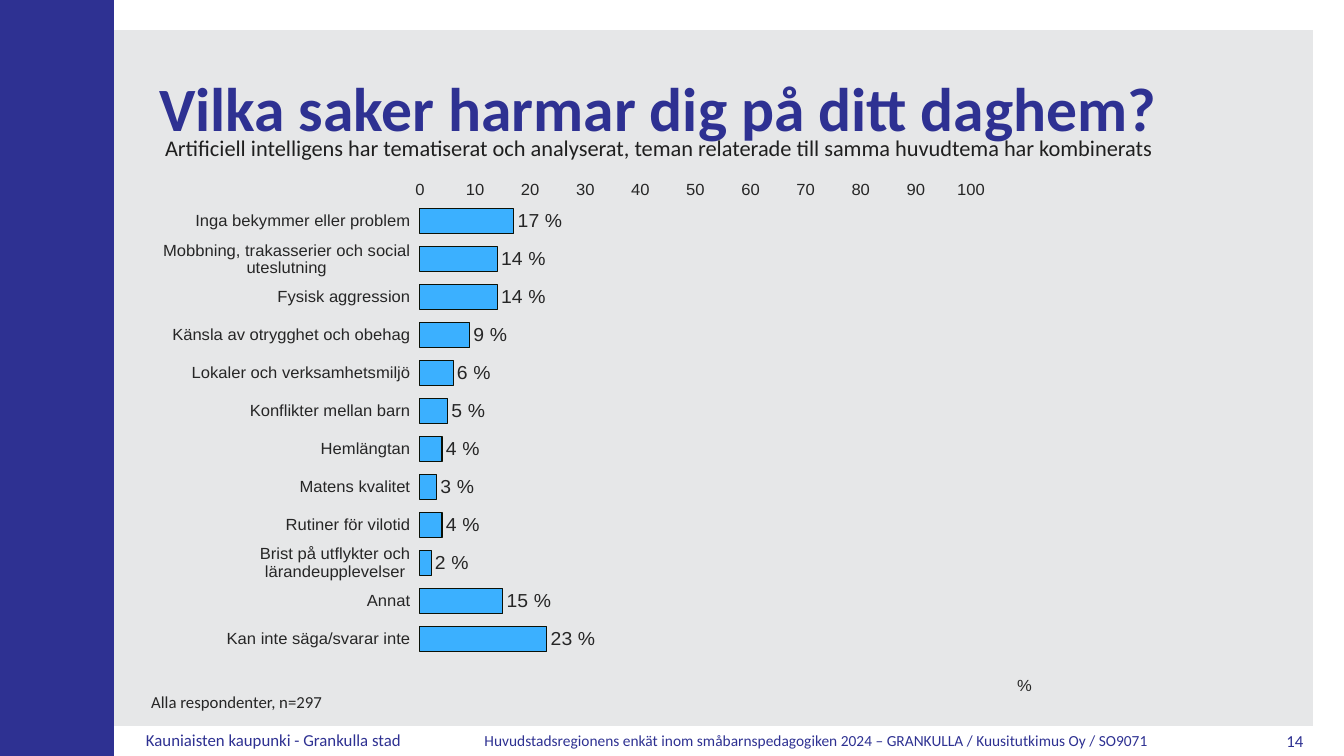
from lxml import etree
from pptx import Presentation
from pptx.chart.data import CategoryChartData
from pptx.dml.color import RGBColor
from pptx.enum.chart import (XL_AXIS_CROSSES, XL_CHART_TYPE, XL_LABEL_POSITION,
                             XL_TICK_LABEL_POSITION, XL_TICK_MARK)
from pptx.enum.shapes import MSO_SHAPE
from pptx.enum.text import MSO_ANCHOR, MSO_AUTO_SIZE, PP_ALIGN
from pptx.oxml.ns import qn
from pptx.util import Cm, Pt

RECT = MSO_SHAPE.RECTANGLE
BAR = XL_CHART_TYPE.BAR_CLUSTERED
MAX = XL_AXIS_CROSSES.MAXIMUM
LOW = XL_TICK_LABEL_POSITION.LOW
OUT_END = XL_LABEL_POSITION.OUTSIDE_END
NO_TICK = XL_TICK_MARK.NONE
TOP, MIDDLE = MSO_ANCHOR.TOP, MSO_ANCHOR.MIDDLE
LEFT, RIGHT = PP_ALIGN.LEFT, PP_ALIGN.RIGHT
NO_FIT = MSO_AUTO_SIZE.NONE

HEX = {"navy": "2E3192", "panel": "E6E7E8", "text": "262626",
       "dark": "1F1F1F", "bar": "3BB0FF", "edge": "0B1107"}

WORRIES = [
    ("Inga bekymmer eller problem", 17),
    ("Mobbning, trakasserier och social uteslutning", 14),
    ("Fysisk aggression", 14),
    ("Känsla av otrygghet och obehag", 9),
    ("Lokaler och verksamhetsmiljö", 6),
    ("Konflikter mellan barn", 5),
    ("Hemlängtan", 4),
    ("Matens kvalitet", 3),
    ("Rutiner för vilotid", 4),
    ("Brist på utflykter och lärandeupplevelser", 2),
    ("Annat", 15),
    ("Kan inte säga/svarar inte", 23),
]


def color(name):
    """Return the named colour."""
    return RGBColor.from_string(HEX[name])


def layout(parent, **parts):
    """Place a chart part by fractions of the chart."""
    old = parent.find(qn("c:layout"))
    if old is not None:
        parent.remove(old)
    node = etree.Element(qn("c:layout"))
    manual = etree.SubElement(node, qn("c:manualLayout"))
    for key, value in parts.items():
        etree.SubElement(manual, qn("c:" + key)).set("val", str(value))
    text = parent.find(qn("c:tx"))
    parent.insert(0 if text is None else 1, node)


class Deck:
    """Hold the style and the current slide."""

    def __init__(self, font="Calibri"):
        """Start a deck with one title-only slide."""
        self.font = font
        self.file = Presentation()
        self.file.slide_width, self.file.slide_height = Cm(33.87), Cm(19.05)
        self.slide = self.file.slides.add_slide(self.file.slide_layouts[5])

    def panel(self, box, fill):
        """Add a plain filled rectangle."""
        shape = self.slide.shapes.add_shape(RECT, *map(Cm, box))
        shape.shadow.inherit = False
        shape.fill.solid()
        shape.fill.fore_color.rgb = color(fill)
        shape.line.fill.background()

    def style(self, frame, text, size, ink, anchor, align, space, bold=False):
        """Fill a text frame with one styled paragraph."""
        frame.word_wrap = True
        frame.auto_size = NO_FIT
        frame.vertical_anchor = anchor
        line = frame.paragraphs[0]
        line.text = text
        line.alignment = align
        line.line_spacing = space
        line.font.name, line.font.size = self.font, Pt(size)
        line.font.bold = bold
        line.font.color.rgb = color(ink)

    def title(self, box, text, size):
        """Move, raise and format the title placeholder."""
        title = self.slide.shapes.title
        title.left, title.top, title.width, title.height = map(Cm, box)
        self.slide.shapes._spTree.append(title._element)
        self.style(title.text_frame, text, size, "navy", MIDDLE, LEFT, 0.9, True)

    def label(self, box, text, size, ink, anchor=TOP, align=LEFT, space=1.0):
        """Add a text box."""
        shape = self.slide.shapes.add_textbox(*map(Cm, box))
        self.style(shape.text_frame, text, size, ink, anchor, align, space)

    def chart(self, box, rows, font="Arial"):
        """Add the bar chart of percentages."""
        data = CategoryChartData()
        data.categories = [name for name, _ in rows]
        data.add_series("Series 1", [value for _, value in rows])
        chart = self.slide.shapes.add_chart(BAR, *map(Cm, box), data).chart
        chart.has_legend = chart.has_title = False
        chart.font.name, chart.font.size = font, Pt(14)
        chart.font.color.rgb = color("text")
        for axis in (chart.category_axis, chart.value_axis):
            axis.has_major_gridlines = False
            axis.major_tick_mark = axis.minor_tick_mark = NO_TICK
            axis.format.line.fill.background()
            axis.tick_labels.font.size = Pt(12)
        cats, scale = chart.category_axis, chart.value_axis
        cats.reverse_order = True
        cats.crosses = MAX
        cats.tick_label_position = LOW
        scale.minimum_scale, scale.maximum_scale = 0, 100
        scale.major_unit = 10
        unit = scale.axis_title
        unit.text_frame.text = "%"
        face = unit.text_frame.paragraphs[0].font
        face.name, face.size, face.bold = font, Pt(12), False
        face.color.rgb = color("text")
        layout(unit._element, xMode="edge", yMode="edge", x=0.98, y=0.96)
        plot = chart.plots[0]
        plot.gap_width = 50
        plot.vary_by_categories = False
        bars = plot.series[0].format
        bars.fill.solid()
        bars.fill.fore_color.rgb = color("bar")
        bars.line.color.rgb = color("edge")
        bars.line.width = Pt(0.75)
        plot.has_data_labels = True
        tags = plot.data_labels
        tags.show_value = True
        tags.position = OUT_END
        tags.number_format = '0" %"'
        tags.number_format_is_linked = False
        tags.font.name, tags.font.size = font, Pt(14)
        tags.font.color.rgb = color("text")
        layout(chart._chartSpace.chart.plotArea, layoutTarget="inner",
               xMode="edge", yMode="edge", x=0.29, y=0.01, w=0.64, h=0.92)


def main():
    """Build and save the slide."""
    deck = Deck()
    deck.panel((0.76, 0.76, 32.33, 17.53), "panel")
    deck.panel((0, 0, 2.87, 19.05), "navy")
    deck.label((3.43, 18.36, 7.32, 0.71), "Kauniaisten kaupunki - Grankulla stad",
               12, "navy", space=0.8)
    deck.label((11.96, 18.34, 17.91, 0.71),
               "Huvudstadsregionens enkät inom småbarnspedagogiken 2024 – "
               "GRANKULLA / Kuusitutkimus Oy / SO9071", 11, "navy", space=0.9)
    deck.title((3.76, 1.32, 29.21, 2.97),
               "Vilka saker harmar dig på ditt daghem?", 44)
    deck.label((3.56, 17.37, 23.32, 0.71), "Alla respondenter, n=297",
               12, "text", space=0.9)
    deck.chart((4.11, 4.57, 21.97, 13.06), WORRIES)
    deck.label((3.91, 3.25, 27.86, 0.94),
               "Artificiell intelligens har tematiserat och analyserat, "
               "teman relaterade till samma huvudtema har kombinerats", 16, "dark")
    deck.label((31.22, 18.29, 1.88, 0.76), "14", 12, "navy", MIDDLE, RIGHT)
    deck.file.save("out.pptx")


if __name__ == "__main__":
    main()
